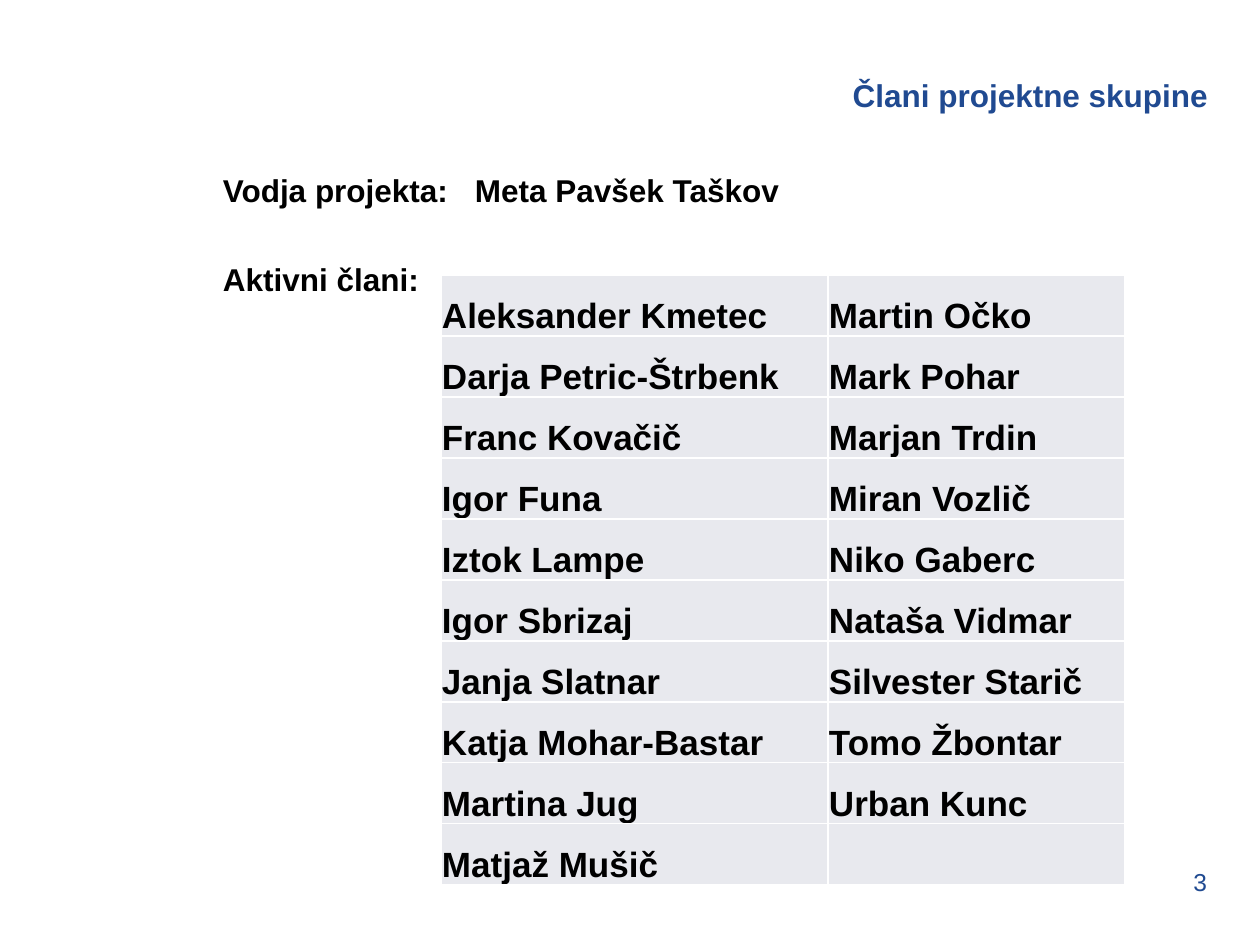
import pptx
import pptx.dml.color
import pptx.enum.text
import pptx.oxml
import pptx.oxml.ns
import pptx.util
import lxml.etree

PX = 914400 // 126
COLORS = {"accent": "204A91", "text": "000000", "cell": "E8E9EE", "border": "FFFFFF"}
ALIGN = pptx.enum.text.PP_ALIGN
ANCHOR = pptx.enum.text.MSO_ANCHOR

MEMBERS = [
    ("Aleksander Kmetec", "Martin Očko"),
    ("Darja Petric-Štrbenk", "Mark Pohar"),
    ("Franc Kovačič", "Marjan Trdin"),
    ("Igor Funa", "Miran Vozlič"),
    ("Iztok Lampe", "Niko Gaberc"),
    ("Igor Sbrizaj", "Nataša Vidmar"),
    ("Janja Slatnar", "Silvester Starič"),
    ("Katja Mohar-Bastar", "Tomo Žbontar"),
    ("Martina Jug", "Urban Kunc"),
    ("Matjaž Mušič", ""),
]


def px(*lengths):
    return [pptx.util.Emu(length * PX) for length in lengths]


def rgb(name):
    return pptx.dml.color.RGBColor.from_string(COLORS[name])


def set_values(target, values):
    for name, value in values.items():
        setattr(target, name, value)


def add_run(paragraph, text, size, color, bold=True):
    run = paragraph.add_run()
    run.text = text
    set_values(run.font, {"name": "Arial", "size": pptx.util.Pt(size), "bold": bold})
    run.font.color.rgb = rgb(color)


def add_text(slide, box, lines, size, color, bold=True, align=ALIGN.LEFT,
             anchor=ANCHOR.TOP, gap=0):
    frame = slide.shapes.add_textbox(*px(*box)).text_frame
    left, top = px(0, 6)
    set_values(frame, {"word_wrap": True, "vertical_anchor": anchor,
                       "margin_left": left, "margin_right": left,
                       "margin_top": top, "margin_bottom": top})
    for index, line in enumerate(lines):
        paragraph = frame.add_paragraph() if index else frame.paragraphs[0]
        paragraph.alignment = align
        if index:
            paragraph.space_before = pptx.util.Pt(gap)
        add_run(paragraph, line, size, color, bold)
    return frame


def add_tab_stop(paragraph, position):
    properties = paragraph._p.get_or_add_pPr()
    tabs = lxml.etree.SubElement(properties, pptx.oxml.ns.qn("a:tabLst"))
    lxml.etree.SubElement(tabs, pptx.oxml.ns.qn("a:tab"),
                          pos=str(position * PX), algn="l")


def add_borders(cell):
    properties = cell._tc.get_or_add_tcPr()
    for side in ("lnL", "lnR", "lnT", "lnB"):
        properties.append(pptx.oxml.parse_xml(
            f'<a:{side} {pptx.oxml.ns.nsdecls("a")} w="12700"><a:solidFill>'
            f'<a:srgbClr val="{COLORS["border"]}"/></a:solidFill></a:{side}>'))


def add_member_table(slide, left, top, widths, row_height):
    box = px(left, top, sum(widths), row_height * len(MEMBERS))
    table = slide.shapes.add_table(len(MEMBERS), len(widths), *box).table
    for column, width in zip(table.columns, px(*widths)):
        column.width = width
    none, thin = px(0, 1)
    for row, names in zip(table.rows, MEMBERS):
        row.height = px(row_height)[0]
        for cell, name in zip(row.cells, names):
            set_values(cell, {"vertical_anchor": ANCHOR.BOTTOM,
                              "margin_left": thin, "margin_right": thin,
                              "margin_top": thin, "margin_bottom": none})
            add_borders(cell)
            cell.fill.solid()
            cell.fill.fore_color.rgb = rgb("cell")
            if name:
                add_run(cell.text_frame.paragraphs[0], name, 20, "text")


def main():
    presentation = pptx.Presentation()
    presentation.slide_width, presentation.slide_height = px(1260, 945)
    slide = presentation.slides.add_slide(presentation.slide_layouts[6])

    # Heading
    add_text(slide, (431, 48, 777, 94), ["Člani projektne skupine"], 18, "accent",
             align=ALIGN.RIGHT, anchor=ANCHOR.MIDDLE)

    # Project lead and label of the member list
    roles = add_text(slide, (223, 165, 684, 552),
                     ["Vodja projekta:\tMeta Pavšek Taškov", "Aktivni člani:"],
                     18, "text", gap=29.5)
    add_tab_stop(roles.paragraphs[0], 252)

    # Slide number
    add_text(slide, (955, 861, 252, 53), ["3"], 14, "accent", bold=False,
             align=ALIGN.RIGHT)

    # Active members
    add_member_table(slide, 441, 275, (387, 297), 61)

    presentation.save("out.pptx")


if __name__ == "__main__":
    main()
